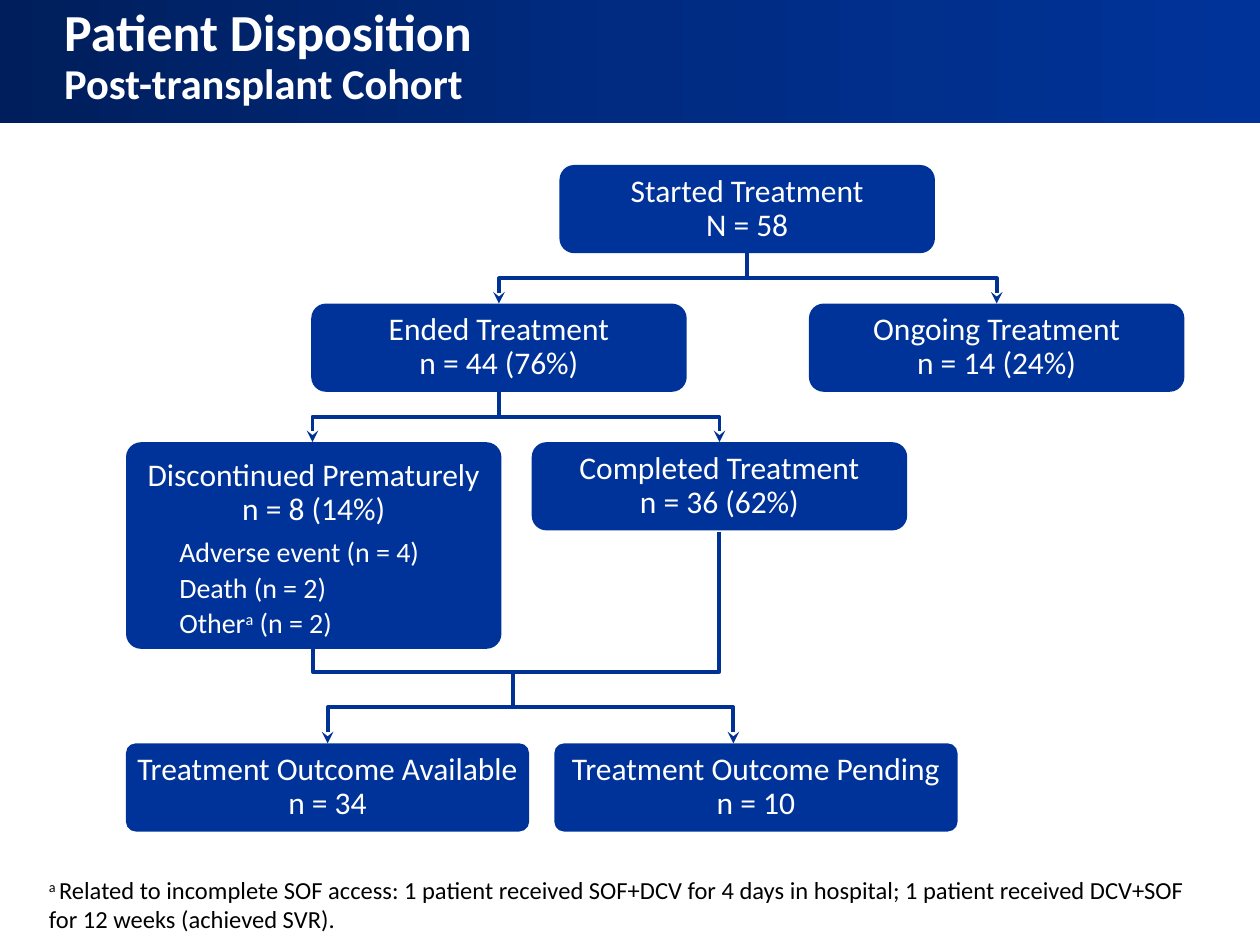
from copy import deepcopy
from lxml.etree import SubElement as Sub
from pptx import Presentation
from pptx.dml.color import RGBColor
from pptx.enum.shapes import MSO_CONNECTOR as Conn, MSO_SHAPE as Shape
from pptx.enum.text import MSO_ANCHOR as Anchor, MSO_AUTO_SIZE as Fit, PP_ALIGN as Align
from pptx.oxml.ns import qn
from pptx.util import Inches, Pt

NAVY = RGBColor(0x00, 0x1E, 0x5B)
MID = RGBColor(0x00, 0x2B, 0x81)
BLUE = RGBColor(0x00, 0x33, 0x99)
LINE = RGBColor(0x00, 0x32, 0x96)
WHITE = RGBColor(0xFF, 0xFF, 0xFF)
BLACK = RGBColor(0, 0, 0)


class Chart:
    face = "Calibri"

    def __init__(self, slide):
        self.slide = slide

    def style(self, para, size, color, bold=False):
        font = para.font
        font.name, font.size, font.bold = self.face, Pt(size), bold
        font.color.rgb = color

    def inset(self, frame, left, top, right, bottom):
        frame.margin_left, frame.margin_top = Inches(left), Inches(top)
        frame.margin_right, frame.margin_bottom = Inches(right), Inches(bottom)

    def runs(self, para, parts):
        for text, high in parts:
            run = para.add_run()
            run.text = text
            if high:
                run._r.get_or_add_rPr().set("baseline", "30000")

    def title(self, head, sub):
        shape = self.slide.shapes.title
        shape.left, shape.top = Inches(0), Inches(0)
        shape.width, shape.height = Inches(10), Inches(0.98)
        fill = shape.fill
        fill.gradient()
        fill.gradient_angle = 0
        first, last = fill.gradient_stops
        first.color.rgb, last.color.rgb = MID, BLUE
        first.position, last.position = 0.5, 1
        start = deepcopy(first._gs)
        first._gs.addprevious(start)
        stop = fill.gradient_stops[0]
        stop.color.rgb, stop.position = NAVY, 0
        frame = shape.text_frame
        frame.auto_size, frame.vertical_anchor = Fit.NONE, Anchor.TOP
        self.inset(frame, 0.51, 0.05, 0.43, 0.05)
        para = frame.paragraphs[0]
        para.alignment, para.line_spacing = Align.LEFT, 0.9
        self.style(para, 29.7, WHITE, True)
        self.runs(para, [(head, False)])
        para.add_line_break()
        self.runs(para, [(sub, False)])
        para.runs[-1].font.size = Pt(24.3)

    def box(self, x, y, text, wide=2.98, high=0.7, round=0.167, side=0.1):
        shape = self.slide.shapes.add_shape(
            Shape.ROUNDED_RECTANGLE, Inches(x), Inches(y), Inches(wide), Inches(high))
        shape.shadow.inherit = False
        shape.adjustments[0] = round
        shape.fill.solid()
        shape.fill.fore_color.rgb = BLUE
        shape.line.fill.background()
        frame = shape.text_frame
        frame.word_wrap, frame.vertical_anchor = True, Anchor.MIDDLE
        self.inset(frame, side, 0.1, side, 0.1)
        para = frame.paragraphs[0]
        para.text = text
        para.alignment, para.line_spacing = Align.CENTER, 0.9
        self.style(para, 18, WHITE)
        return frame

    def items(self, frame, rows):
        frame.vertical_anchor = Anchor.TOP
        frame.paragraphs[0].space_after = Pt(6.5)
        for parts in rows:
            para = frame.add_paragraph()
            para.alignment, para.line_spacing = Align.LEFT, 0.9
            para.space_after = Pt(3)
            para._p.get_or_add_pPr().set("marL", str(Inches(0.29)))
            self.style(para, 16, WHITE)
            self.runs(para, parts)

    def link(self, x1, y1, x2, y2, kind="bentConnector3", arrow=True):
        midx, midy = (x1 + x2) / 2, (y1 + y2) / 2
        dx, dy = abs(x2 - x1) / 2, abs(y2 - y1) / 2
        conn = self.slide.shapes.add_connector(
            Conn.ELBOW, Inches(midx - dy), Inches(midy - dx),
            Inches(midx + dy), Inches(midy + dx))
        conn.line.color.rgb, conn.line.width = LINE, Pt(2.25)
        props = conn._element.spPr
        props.find(qn("a:prstGeom")).set("prst", kind)
        frame = props.find(qn("a:xfrm"))
        frame.set("rot", str((270 if x2 > x1 else 90) * 60000))
        if x2 > x1:
            frame.set("flipH", "1")
        if arrow:
            Sub(props.find(qn("a:ln")), qn("a:tailEnd"), type="stealth")
        Sub(props, qn("a:effectLst"))

    def note(self, parts):
        frame = self.slide.shapes.add_textbox(
            Inches(0.29), Inches(6.89), Inches(9.39), Inches(0.57)).text_frame
        frame.word_wrap, frame.vertical_anchor = True, Anchor.BOTTOM
        para = frame.paragraphs[0]
        self.style(para, 14, BLACK)
        self.runs(para, parts)


def main():
    deck = Presentation()
    deck.slide_width, deck.slide_height = Inches(10), Inches(7.5)
    chart = Chart(deck.slides.add_slide(deck.slide_layouts[5]))
    chart.title("Patient Disposition", "Post-transplant Cohort")
    chart.note([("a ", True), (
        "Related to incomplete SOF access: 1 patient received SOF+DCV for 4 days "
        "in hospital; 1 patient received DCV+SOF for 12 weeks (achieved SVR).", False)])

    chart.box(4.44, 1.31, "Started Treatment\vN = 58")
    chart.box(2.47, 2.41, "Ended Treatment\vn = 44 (76%)")
    chart.box(6.42, 2.41, "Ongoing Treatment\vn = 14 (24%)")
    chart.box(4.22, 3.51, "Completed Treatment\vn = 36 (62%)")
    early = chart.box(1, 3.51, "Discontinued Prematurely\vn = 8 (14%)", high=1.64, round=0.073)
    chart.items(early, [
        [("Adverse event (n = 4)", False)],
        [("Death (n = 2)", False)],
        [("Other", False), ("a", True), (" (n = 2)", False)],
    ])
    chart.box(1, 5.9, "Treatment Outcome Available\vn = 34", wide=3.2, round=0.111, side=0)
    chart.box(4.4, 5.9, "Treatment Outcome Pending\vn = 10", wide=3.2, round=0.111)

    for x, y, ends, foot in (
        (5.93, 2.01, (3.96, 7.91), 2.41),
        (3.96, 3.11, (2.48, 5.71), 3.51),
        (4.07, 5.33, (2.6, 5.82), 5.9),
    ):
        for end in ends:
            chart.link(x, y, end, foot)
    for x, y in ((5.71, 4.22), (2.48, 5.15)):
        chart.link(x, y, 4.09, 5.33, "bentConnector2", False)

    deck.save("out.pptx")


if __name__ == "__main__":
    main()
